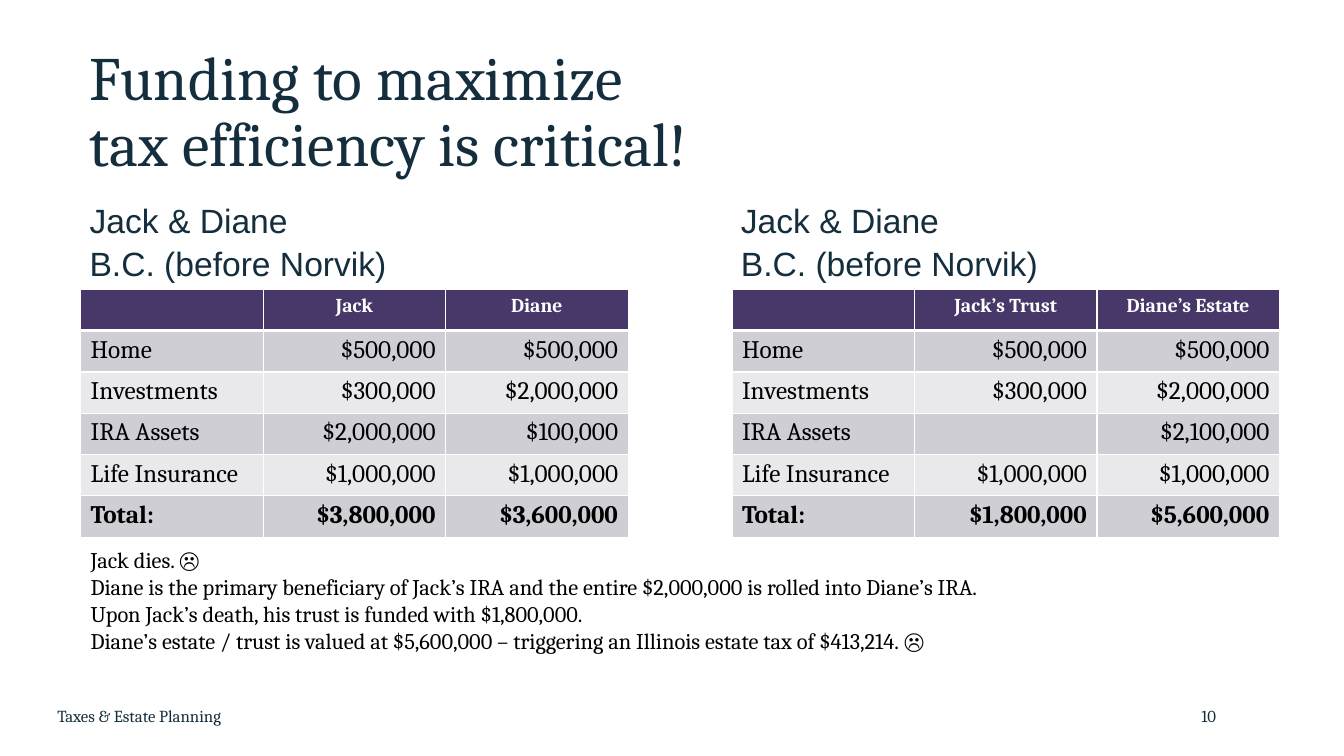
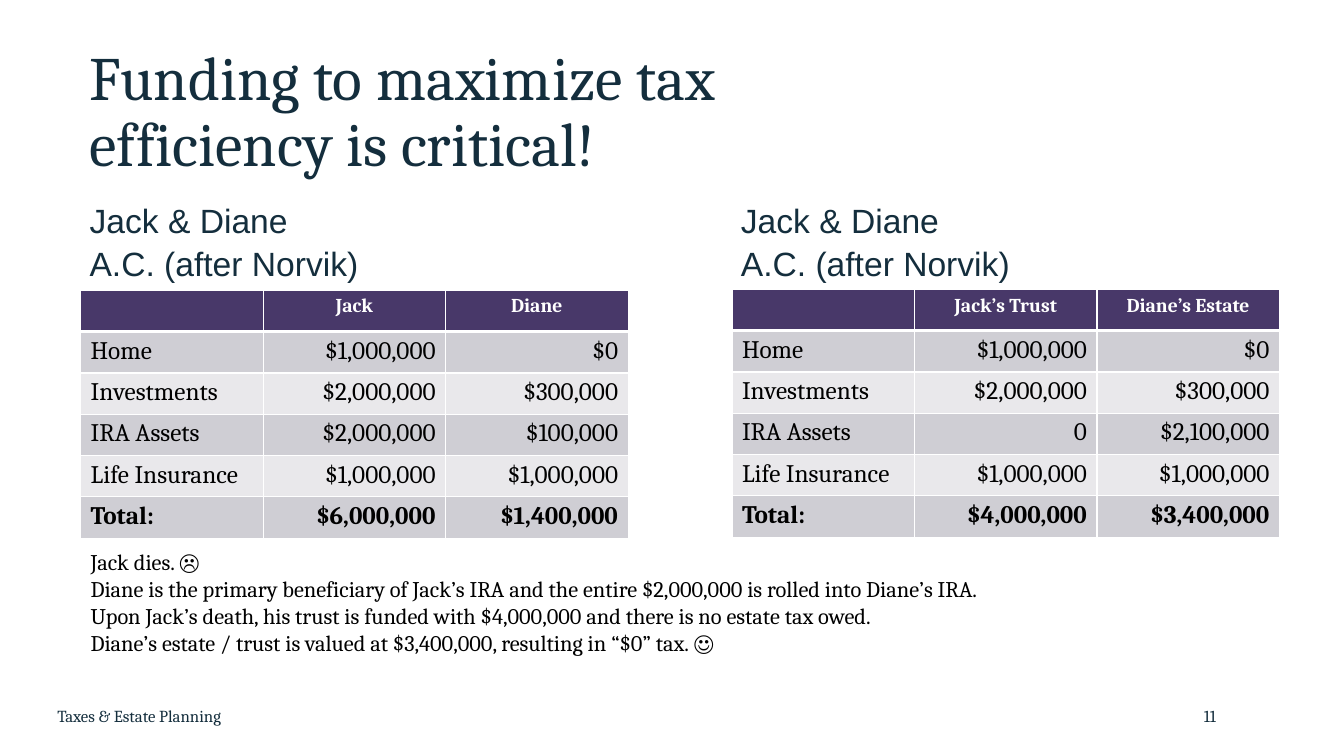
from dataclasses import dataclass
from typing import Any

from lxml import etree
from pptx import Presentation
from pptx.dml.color import RGBColor
from pptx.enum.text import MSO_ANCHOR, MSO_AUTO_SIZE, PP_ALIGN
from pptx.oxml.ns import qn
from pptx.util import Inches, Pt

LEFT, CENTER, RIGHT = PP_ALIGN.LEFT, PP_ALIGN.CENTER, PP_ALIGN.RIGHT
TOP, MIDDLE = MSO_ANCHOR.TOP, MSO_ANCHOR.MIDDLE
NO_AUTOFIT = MSO_AUTO_SIZE.NONE

NAVY, PURPLE, BLACK, WHITE = "142E3D", "483869", "000000", "FFFFFF"
BAND_FILLS = ("CFCED4", "E9E8EB")
SERIF, SANS = "Cambria", "Arial"
TITLE_ONLY = 5
COLUMN_WIDTH, ROW_HEIGHT = 1.81, 0.41
TABLE_LEFTS = (0.8, 7.26)
HEADING_LEFTS = (0.79, 7.25)
ASSETS = ("Home", "Investments", "IRA Assets", "Life Insurance", "Total:")
FOOTER = "Taxes & Estate Planning"


@dataclass(frozen=True)
class TextStyle:
    size: float
    color: str
    font: str = SERIF
    bold: bool = False
    align: Any = LEFT
    spacing: float = 1.0


@dataclass(frozen=True)
class Box:
    left: float
    top: float
    width: float
    height: float


@dataclass(frozen=True)
class Holdings:
    owners: tuple[str, str]
    first: tuple[str, ...]
    second: tuple[str, ...]
    top: float = 2.87


@dataclass(frozen=True)
class FundingSlide:
    number: int
    title: str
    title_width: float
    heading: str
    holdings: tuple[Holdings, Holdings]
    outcome_top: float
    outcome: tuple[str, str]


TITLE = TextStyle(44, NAVY, spacing=0.9)
HEADING = TextStyle(24, NAVY, SANS, spacing=1.06)
OUTCOME = TextStyle(16, BLACK)
FOOTER_LEFT = TextStyle(12, NAVY)
FOOTER_RIGHT = TextStyle(12, NAVY, align=RIGHT)
HEADER_CELL = TextStyle(14, WHITE, bold=True, align=CENTER)

BEFORE_AND_AFTER = (
    FundingSlide(
        10, "Funding to maximize\vtax efficiency is critical!", 7.99,
        "Jack & Diane\vB.C. (before Norvik)",
        (
            Holdings(
                ("Jack", "Diane"),
                ("$500,000", "$300,000", "$2,000,000", "$1,000,000", "$3,800,000"),
                ("$500,000", "$2,000,000", "$100,000", "$1,000,000", "$3,600,000"),
            ),
            Holdings(
                ("Jack’s Trust", "Diane’s Estate"),
                ("$500,000", "$300,000", "", "$1,000,000", "$1,800,000"),
                ("$500,000", "$2,000,000", "$2,100,000", "$1,000,000", "$5,600,000"),
            ),
        ),
        5.37,
        (
            "Upon Jack’s death, his trust is funded with $1,800,000.",
            "Diane’s estate / trust is valued at $5,600,000 – triggering an Illinois estate tax of $413,214. ☹",
        ),
    ),
    FundingSlide(
        11, "Funding to maximize tax efficiency is critical!", 7.51,
        "Jack & Diane\vA.C. (after Norvik)",
        (
            Holdings(
                ("Jack", "Diane"),
                ("$1,000,000", "$2,000,000", "$2,000,000", "$1,000,000", "$6,000,000"),
                ("$0", "$300,000", "$100,000", "$1,000,000", "$1,400,000"),
                2.88,
            ),
            Holdings(
                ("Jack’s Trust", "Diane’s Estate"),
                ("$1,000,000", "$2,000,000", "0", "$1,000,000", "$4,000,000"),
                ("$0", "$300,000", "$2,100,000", "$1,000,000", "$3,400,000"),
            ),
        ),
        5.39,
        (
            "Upon Jack’s death, his trust is funded with $4,000,000 and there is no estate tax owed.",
            "Diane’s estate / trust is valued at $3,400,000, resulting in “$0” tax. ☺",
        ),
    ),
)


def rgb(color: str) -> RGBColor:
    return RGBColor.from_string(color)


def write_text(text_frame: Any, text: str, style: TextStyle) -> None:
    text_frame.text = text
    for paragraph in text_frame.paragraphs:
        paragraph.alignment = style.align
        paragraph.line_spacing = style.spacing
        for run in paragraph.runs:
            run.font.name = style.font
            run.font.size = Pt(style.size)
            run.font.bold = style.bold
            run.font.color.rgb = rgb(style.color)


def fill_box(shape: Any, box: Box, text: str, style: TextStyle, anchor: Any) -> None:
    shape.left, shape.top = Inches(box.left), Inches(box.top)
    shape.width, shape.height = Inches(box.width), Inches(box.height)
    text_frame = shape.text_frame
    text_frame.word_wrap = True
    text_frame.auto_size = NO_AUTOFIT
    text_frame.vertical_anchor = anchor
    write_text(text_frame, text, style)


def add_text(slide: Any, box: Box, text: str, style: TextStyle, anchor: Any = TOP) -> None:
    fill_box(slide.shapes.add_textbox(0, 0, 0, 0), box, text, style, anchor)


def set_borders(cell: Any, bottom_width: float) -> None:
    properties = cell._tc.get_or_add_tcPr()
    widths = {"a:lnL": 1, "a:lnR": 1, "a:lnT": 1, "a:lnB": bottom_width}
    for position, (tag, width) in enumerate(widths.items()):
        line = etree.Element(qn(tag), w=str(Pt(width)))
        fill = etree.SubElement(line, qn("a:solidFill"))
        etree.SubElement(fill, qn("a:srgbClr"), val=WHITE)
        properties.insert(position, line)


def add_holdings(slide: Any, left: float, holdings: Holdings) -> None:
    rows = [("", *holdings.owners), *zip(ASSETS, holdings.first, holdings.second)]
    table = slide.shapes.add_table(
        len(rows), 3, Inches(left), Inches(holdings.top),
        Inches(3 * COLUMN_WIDTH), Inches(len(rows) * ROW_HEIGHT),
    ).table
    table.first_row = False
    table.horz_banding = False
    for row_index, values in enumerate(rows):
        is_header = row_index == 0
        is_total = row_index == len(rows) - 1
        fill = PURPLE if is_header else BAND_FILLS[(row_index - 1) % 2]
        for column_index, value in enumerate(values):
            cell = table.cell(row_index, column_index)
            cell.fill.solid()
            cell.fill.fore_color.rgb = rgb(fill)
            align = RIGHT if column_index else LEFT
            style = HEADER_CELL if is_header else TextStyle(18, BLACK, bold=is_total, align=align)
            write_text(cell.text_frame, value, style)
            set_borders(cell, 3 if is_header else 1)


def add_funding_slide(presentation: Any, content: FundingSlide) -> None:
    slide = presentation.slides.add_slide(presentation.slide_layouts[TITLE_ONLY])
    title_box = Box(0.79, 0.4, content.title_width, 1.45)
    fill_box(slide.shapes.title, title_box, content.title, TITLE, MIDDLE)
    for left in HEADING_LEFTS:
        add_text(slide, Box(left, 1.91, 5.15, 1.07), content.heading, HEADING)
    for left, holdings in zip(TABLE_LEFTS, content.holdings):
        add_holdings(slide, left, holdings)
    story = (
        "Jack dies. ☹",
        "Diane is the primary beneficiary of Jack’s IRA and the entire $2,000,000 is rolled into Diane’s IRA.",
        *content.outcome,
    )
    add_text(slide, Box(0.8, content.outcome_top, 11.59, 1.18), "\n".join(story), OUTCOME)
    add_text(slide, Box(0.47, 6.9, 4.5, 0.4), FOOTER, FOOTER_LEFT, MIDDLE)
    add_text(slide, Box(9.16, 6.9, 3, 0.4), str(content.number), FOOTER_RIGHT, MIDDLE)


def main() -> None:
    presentation = Presentation()
    presentation.slide_width = Inches(13.33)
    presentation.slide_height = Inches(7.5)
    for content in BEFORE_AND_AFTER:
        add_funding_slide(presentation, content)
    presentation.save("out.pptx")


if __name__ == "__main__":
    main()
